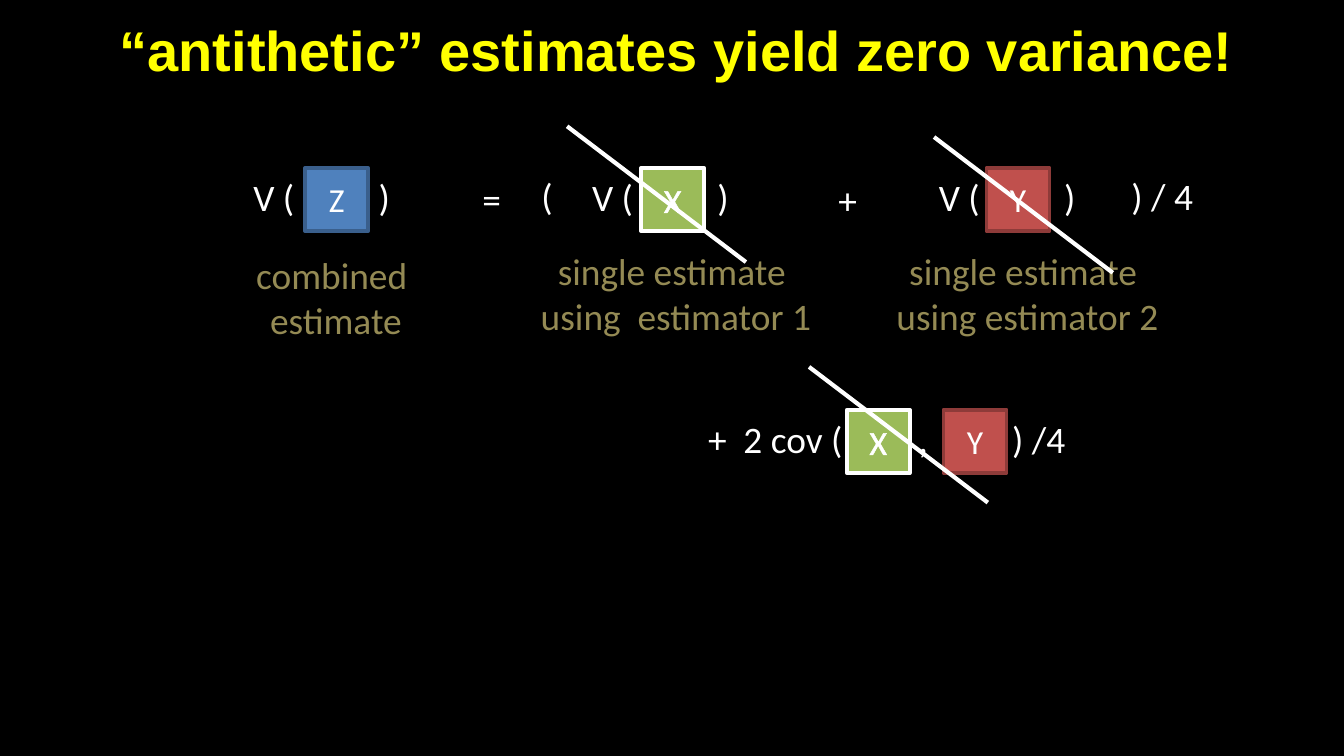
from lxml import etree
from pptx import Presentation
from pptx.dml.color import RGBColor
from pptx.enum.shapes import MSO_CONNECTOR, MSO_SHAPE
from pptx.enum.text import MSO_ANCHOR, MSO_AUTO_SIZE, PP_ALIGN
from pptx.oxml.ns import qn
from pptx.util import Inches, Pt

LEFT, CENTER = PP_ALIGN.LEFT, PP_ALIGN.CENTER
MIDDLE = MSO_ANCHOR.MIDDLE
FIT_SHAPE = MSO_AUTO_SIZE.SHAPE_TO_FIT_TEXT
NO_FIT = MSO_AUTO_SIZE.NONE
RECTANGLE = MSO_SHAPE.RECTANGLE
STRAIGHT = MSO_CONNECTOR.STRAIGHT

BLACK, WHITE, YELLOW, TAN = "000000", "FFFFFF", "FFFF00", "948A54"
# Fill, border and whether the letter is outlined, for each estimator
ESTIMATORS = {
    "Z": ("4F81BD", "3A5F8C", False),
    "X": ("9BBB59", WHITE, True),
    "Y": ("C0504D", "8E3B39", False),
}
BOX_SIZE = 0.47
LINE_HEIGHT = 0.44


def rgb(color):
    return RGBColor.from_string(color)


def format_text(text_frame, size, color, alignment, font="Calibri", bold=False):
    for paragraph in text_frame.paragraphs:
        paragraph.alignment = alignment
        for run in paragraph.runs:
            run.font.name = font
            run.font.size = Pt(size)
            run.font.bold = bold
            run.font.color.rgb = rgb(color)


def outline_letters(text_frame, color, width):
    for run in text_frame.paragraphs[0].runs:
        outline = etree.Element(qn("a:ln"), w=str(Pt(width)))
        fill = etree.SubElement(outline, qn("a:solidFill"))
        etree.SubElement(fill, qn("a:srgbClr"), val=color)
        run.font._element.insert(0, outline)


def add_title(slide, text):
    title = slide.shapes.title
    title.left, title.top = Inches(0.3), Inches(0.08)
    title.width, title.height = Inches(9.47), Inches(0.57)
    text_frame = title.text_frame
    text_frame.text = text
    text_frame.vertical_anchor = MIDDLE
    text_frame.auto_size = NO_FIT
    text_frame.margin_left = text_frame.margin_right = Inches(0.09)
    text_frame.margin_top = text_frame.margin_bottom = Inches(0.04)
    format_text(text_frame, 30, YELLOW, CENTER, "Arial", True)


def add_label(shapes, text, left, top, width, height=LINE_HEIGHT,
              color=WHITE, alignment=CENTER):
    label = shapes.add_textbox(Inches(left), Inches(top), Inches(width), Inches(height))
    text_frame = label.text_frame
    text_frame.text = text
    text_frame.word_wrap = False
    text_frame.auto_size = FIT_SHAPE
    format_text(text_frame, 20, color, alignment)


def add_estimator(shapes, letter, left, top):
    fill, border, outlined = ESTIMATORS[letter]
    box = shapes.add_shape(RECTANGLE, Inches(left), Inches(top),
                           Inches(BOX_SIZE), Inches(BOX_SIZE))
    box.shadow.inherit = False
    box.fill.solid()
    box.fill.fore_color.rgb = rgb(fill)
    box.line.color.rgb = rgb(border)
    box.line.width = Pt(2)
    box.text_frame.text = letter
    box.text_frame.vertical_anchor = MIDDLE
    format_text(box.text_frame, 18, WHITE, CENTER)
    if outlined:
        outline_letters(box.text_frame, WHITE, 0.75)


def add_strike(shapes, left, top):
    strike = shapes.add_connector(STRAIGHT, Inches(left), Inches(top),
                                  Inches(left + 1.33), Inches(top + 1.01))
    strike.line.color.rgb = rgb(WHITE)
    strike.line.width = Pt(2.25)
    etree.SubElement(strike._element.spPr, qn("a:effectLst"))


def main():
    presentation = Presentation()
    # Widescreen, 16:9
    presentation.slide_width = Inches(10)
    presentation.slide_height = Inches(10 * 9 / 16)
    slide = presentation.slides.add_slide(presentation.slide_layouts[5])
    slide.background.fill.solid()
    slide.background.fill.fore_color.rgb = rgb(BLACK)
    shapes = slide.shapes
    add_title(slide, "“antithetic” estimates yield zero variance!")

    # Variance terms: boxes first, then the brackets around them
    for letter, left in (("Z", 2.27), ("X", 4.77), ("Y", 7.34)):
        add_estimator(shapes, letter, left, 1.25)

    # Operators between the terms
    for text, left, top, width in (("=", 3.49, 1.26, 0.34), ("+", 6.14, 1.27, 0.34),
                                   ("(", 3.93, 1.24, 0.29), (") / 4", 8.32, 1.24, 0.66)):
        add_label(shapes, text, left, top, width, alignment=LEFT)
    for left in (1.78, 4.3, 6.88):
        add_label(shapes, "V (          )", left, 1.25, 1.23)

    # Covariance term
    covariance = shapes.add_group_shape().shapes
    add_label(covariance, "+  2 cov (         ,          ) /4", 5.16, 3.05, 2.88)
    add_estimator(covariance, "X", 6.3, 3.05)
    add_estimator(covariance, "Y", 7.02, 3.05)

    # Captions under the variance terms
    for text, left, top, width in (
            ("combined \nestimate", 1.8, 1.83, 1.4),
            ("single estimate \nusing  estimator 1", 3.91, 1.8, 2.24),
            ("single estimate \nusing estimator 2", 6.56, 1.8, 2.17)):
        add_label(shapes, text, left, top, width, 0.77, TAN)

    # Strikes through the terms that cancel
    for left, top in ((4.22, 0.94), (6.95, 1.02), (6.02, 2.73)):
        add_strike(shapes, left, top)

    presentation.save("out.pptx")


if __name__ == "__main__":
    main()
